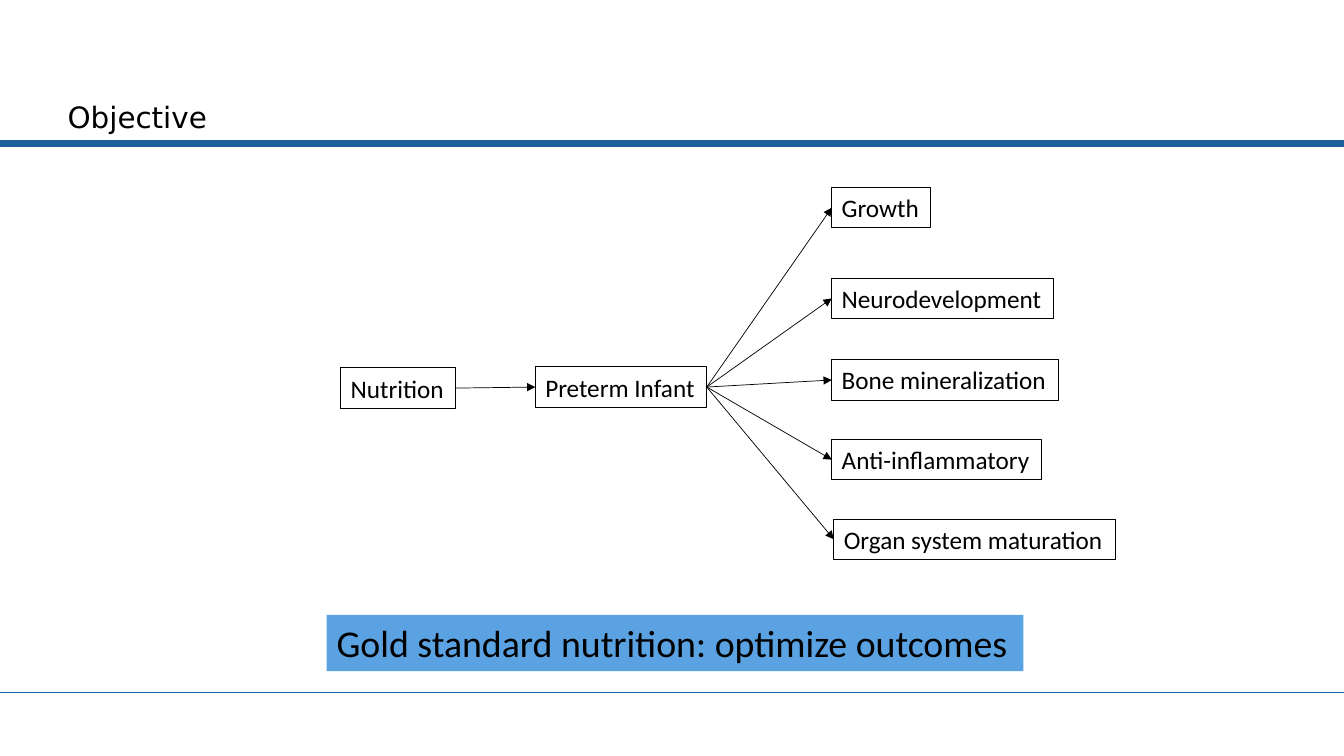
import dataclasses

import pptx
import pptx.dml.color
import pptx.enum.shapes
import pptx.enum.text
import pptx.oxml
import pptx.oxml.ns
import pptx.util
from pptx.util import Inches

RIGHT_SIDE, LEFT_SIDE = 3, 1
SLIDE_WIDTH, SLIDE_HEIGHT = 13.33, 7.5
BOX_HEIGHT = 0.4
OUTCOMES = [
    ("Growth", 8.25, 1.86, 0.98),
    ("Neurodevelopment", 8.25, 2.76, 2.2),
    ("Bone mineralization", 8.25, 3.57, 2.25),
    ("Anti-inflammatory", 8.25, 4.36, 2.08),
    ("Organ system maturation", 8.27, 5.15, 2.79),
]


@dataclasses.dataclass(frozen=True)
class Theme:
    """Colours, fonts and type sizes of the slide."""
    ink: str = "000000"
    rule: str = "1C619E"
    banner: str = "5AA2E2"
    title_font: str = "DejaVu Sans"
    body_font: str = "Calibri"
    title_size: int = 21
    box_size: int = 18
    banner_size: int = 27


THEME = Theme()


def color(value):
    """Return an RGB colour from its hex form."""
    return pptx.dml.color.RGBColor.from_string(value)


def apply_format(target, values):
    """Set each named attribute on the target."""
    for name, value in values.items():
        setattr(target, name, value)


def write_text(shape, text, font, size, frame_format, paragraph_format):
    """Put one formatted line of text in a shape."""
    apply_format(shape.text_frame, frame_format)
    paragraph = shape.text_frame.paragraphs[0]
    apply_format(paragraph, paragraph_format)
    run = paragraph.add_run()
    run.text = text
    apply_format(run.font, {"name": font, "size": pptx.util.Pt(size), "bold": False})
    run.font.color.rgb = color(THEME.ink)


def set_title(slide, text):
    """Place and format the title placeholder."""
    title = slide.shapes.title
    apply_format(title, {"left": Inches(0.57), "top": Inches(0.4),
                         "width": Inches(12.25), "height": Inches(0.99)})
    write_text(title, text, THEME.title_font, THEME.title_size,
               {"vertical_anchor": pptx.enum.text.MSO_ANCHOR.BOTTOM, "word_wrap": True},
               {"alignment": pptx.enum.text.PP_ALIGN.LEFT, "line_spacing": 0.9})


def add_label(slide, text, left, top, width, height, size):
    """Add a text box that fits its single line."""
    label = slide.shapes.add_textbox(Inches(left), Inches(top), Inches(width), Inches(height))
    write_text(label, text, THEME.body_font, size,
               {"word_wrap": False, "auto_size": pptx.enum.text.MSO_AUTO_SIZE.SHAPE_TO_FIT_TEXT},
               {"alignment": pptx.enum.text.PP_ALIGN.LEFT})
    return label


def add_box(slide, text, left, top, width):
    """Add an outlined diagram box."""
    box = add_label(slide, text, left, top, width, BOX_HEIGHT, THEME.box_size)
    box.line.color.rgb = color(THEME.ink)
    box.line.width = pptx.util.Pt(0.75)
    return box


def add_banner(slide, text):
    """Add the filled conclusion banner."""
    banner = add_label(slide, text, 3.24, 6.1, 6.91, 0.56, THEME.banner_size)
    banner.fill.solid()
    banner.fill.fore_color.rgb = color(THEME.banner)


def add_line(slide, line_color, width, start=(0, 0), end=(0, 0)):
    """Add a straight line without a shadow."""
    line = slide.shapes.add_connector(pptx.enum.shapes.MSO_CONNECTOR.STRAIGHT,
                                      *map(Inches, start + end))
    line.line.color.rgb = color(line_color)
    line.line.width = pptx.util.Pt(width)
    properties = line._element.spPr
    properties.append(pptx.oxml.parse_xml(f"<a:effectLst {pptx.oxml.ns.nsdecls('a')}/>"))
    return line


def add_arrow(slide, source, target):
    """Join the right side of one box to the left side of another."""
    arrow = add_line(slide, THEME.ink, 0.5)
    arrow.begin_connect(source, RIGHT_SIDE)
    arrow.end_connect(target, LEFT_SIDE)
    arrow.line._get_or_add_ln().append(pptx.oxml.parse_xml(
        f"<a:tailEnd {pptx.oxml.ns.nsdecls('a')} type='triangle'/>"))


def main():
    """Build and save the slide."""
    presentation = pptx.Presentation()
    presentation.slide_width = Inches(SLIDE_WIDTH)
    presentation.slide_height = Inches(SLIDE_HEIGHT)
    slide = presentation.slides.add_slide(presentation.slide_layouts.get_by_name("Title Only"))

    for top, width in ((6.87, 1), (1.42, 5)):
        add_line(slide, THEME.rule, width, (0, top), (SLIDE_WIDTH, top))
    set_title(slide, "Objective")

    infant = add_box(slide, "Preterm Infant", 5.31, 3.64, 1.7)
    nutrition = add_box(slide, "Nutrition", 3.38, 3.65, 1.14)
    add_arrow(slide, nutrition, infant)
    for outcome in OUTCOMES:
        add_arrow(slide, infant, add_box(slide, *outcome))
    add_banner(slide, "Gold standard nutrition: optimize outcomes")

    presentation.save("out.pptx")


if __name__ == "__main__":
    main()
